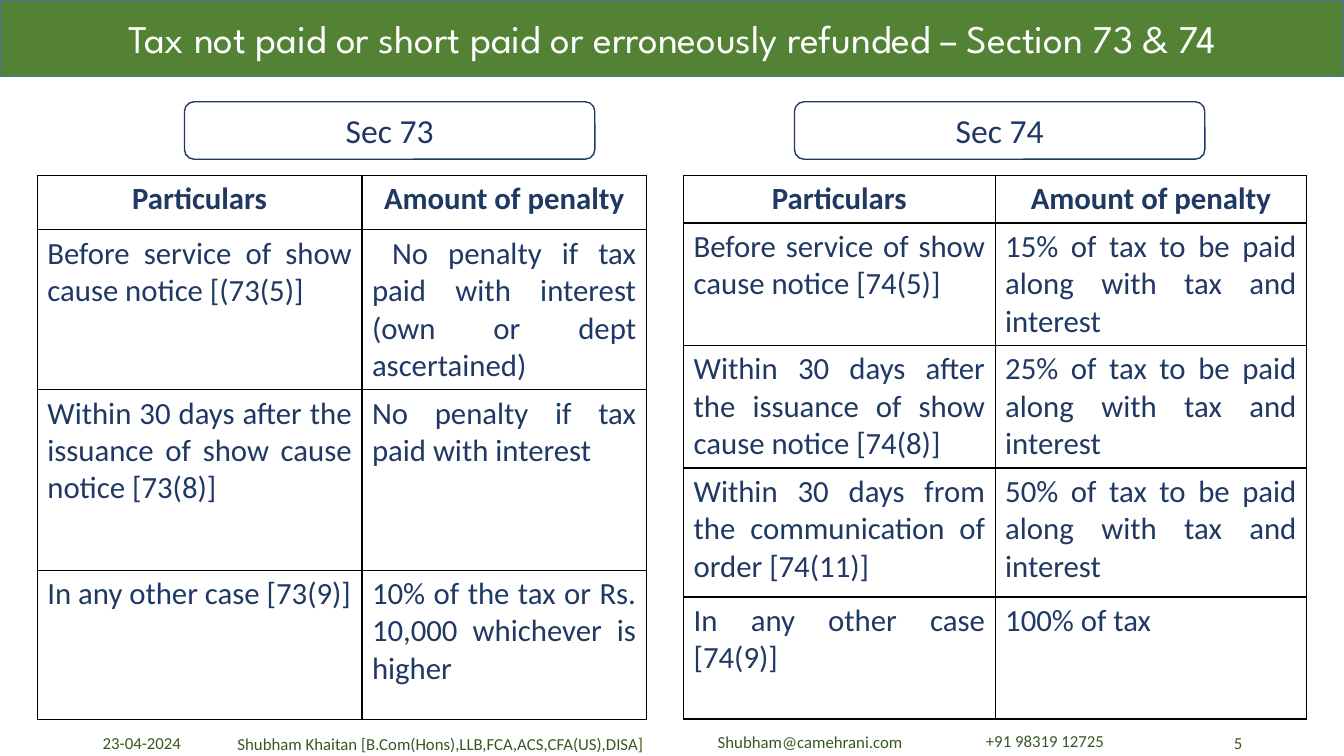
from dataclasses import dataclass

from lxml import etree
from pptx import Presentation
from pptx.dml.color import RGBColor
from pptx.enum.shapes import MSO_SHAPE
from pptx.enum.text import MSO_ANCHOR, PP_ALIGN
from pptx.oxml.ns import qn
from pptx.util import Pt

RECTANGLE = MSO_SHAPE.RECTANGLE
ROUNDED = MSO_SHAPE.ROUNDED_RECTANGLE
MIDDLE = MSO_ANCHOR.MIDDLE
TOP = MSO_ANCHOR.TOP
LEFT = PP_ALIGN.LEFT
CENTER = PP_ALIGN.CENTER
RIGHT = PP_ALIGN.RIGHT
JUSTIFY = PP_ALIGN.JUSTIFY

EMU_PER_PX = 9144
HEADER = ("Particulars", "Amount of penalty")
SECTION_73 = [
    HEADER,
    ("Before service of show cause notice [(73(5)]",
     " No penalty if tax paid with interest (own or dept ascertained)"),
    ("Within 30 days after the issuance of show cause notice [73(8)]",
     "No penalty if tax paid with interest"),
    ("In any other case [73(9)]",
     "10% of the tax or Rs. 10,000 whichever is higher"),
]
SECTION_74 = [
    HEADER,
    ("Before service of show cause notice [74(5)]",
     "15% of tax to be paid along with tax and interest"),
    ("Within 30 days after the issuance of show cause notice [74(8)]",
     "25% of tax to be paid along with tax and interest"),
    ("Within 30 days from the communication of order [74(11)]",
     "50% of tax to be paid along with tax and interest"),
    ("In any other case [74(9)]", "100% of tax"),
]


@dataclass(frozen=True)
class Theme:
    """Colours, fonts and type sizes of the slide."""
    white: str = "FFFFFF"
    black: str = "000000"
    navy: str = "203864"
    green: str = "548235"
    dark_green: str = "385723"
    banner_line: str = "43739E"
    body_font: str = "Calibri"
    title_font: str = "League Spartan"
    title_size: int = 28
    label_size: int = 24
    table_size: int = 22
    footer_size: int = 12
    line_width: int = 1


def px(length):
    """Turn a length in px into EMU."""
    return length * EMU_PER_PX


class SlideBuilder:
    """Adds styled elements to the current slide."""

    def __init__(self, slide, theme):
        """Keep the slide and its theme."""
        self.slide = slide
        self.theme = theme

    def add_text(self, frame, text, size, color, align, font=None, bold=False):
        """Put one run into the first paragraph of a text frame."""
        frame.word_wrap = True
        paragraph = frame.paragraphs[0]
        paragraph.alignment = align
        run = paragraph.add_run()
        run.text = text
        run.font.name = font or self.theme.body_font
        run.font.size = Pt(size)
        run.font.bold = bold
        run.font.color.rgb = RGBColor.from_string(color)

    def box(self, kind, bounds, fill, line, text, size, color, font=None):
        """Add a filled, outlined shape with centred text."""
        shape = self.slide.shapes.add_shape(kind, *map(px, bounds))
        shape.shadow.inherit = False
        shape.fill.solid()
        shape.fill.fore_color.rgb = RGBColor.from_string(fill)
        shape.line.color.rgb = RGBColor.from_string(line)
        shape.line.width = Pt(self.theme.line_width)
        shape.text_frame.vertical_anchor = MIDDLE
        self.add_text(shape.text_frame, text, size, color, CENTER, font)

    def footer(self, bounds, text, align=LEFT, anchor=MIDDLE):
        """Add a small footer text."""
        shape = self.slide.shapes.add_textbox(*map(px, bounds))
        shape.text_frame.vertical_anchor = anchor
        self.add_text(shape.text_frame, text, self.theme.footer_size,
                      self.theme.dark_green, align)

    def border(self, cell):
        """Draw a solid line on every side of a cell."""
        properties = cell._tc.get_or_add_tcPr()
        for side in ("a:lnL", "a:lnR", "a:lnT", "a:lnB"):
            line = etree.SubElement(properties, qn(side),
                                    w=str(Pt(self.theme.line_width)))
            fill = etree.SubElement(line, qn("a:solidFill"))
            etree.SubElement(fill, qn("a:srgbClr"), val=self.theme.black)

    def table(self, left, top, widths, heights, rows):
        """Add a bordered table with a bold, centred header row."""
        table = self.slide.shapes.add_table(
            len(rows), len(widths), px(left), px(top),
            px(sum(widths)), px(sum(heights))).table
        table.first_row = False
        table.horz_banding = False
        for column, width in zip(table.columns, widths):
            column.width = px(width)
        for row, height, texts in zip(table.rows, heights, rows):
            row.height = px(height)
            is_header = texts is HEADER
            for cell, text in zip(row.cells, texts):
                self.border(cell)
                cell.fill.solid()
                cell.fill.fore_color.rgb = RGBColor.from_string(self.theme.white)
                self.add_text(cell.text_frame, text, self.theme.table_size,
                              self.theme.navy, CENTER if is_header else JUSTIFY,
                              bold=is_header)


def main():
    """Build the slide and save it."""
    theme = Theme()
    presentation = Presentation()
    presentation.slide_width = px(1333)
    presentation.slide_height = px(750)
    slide = presentation.slides.add_slide(presentation.slide_layouts[6])
    builder = SlideBuilder(slide, theme)

    builder.table(37, 174, (322, 282), (54, 158, 179, 148), SECTION_73)
    builder.table(678, 174, (309, 309), (47, 121, 121, 128, 121), SECTION_74)
    for left, label in ((183, "Sec 73"), (788, "Sec 74")):
        builder.box(ROUNDED, (left, 101, 407, 57), theme.white, theme.navy,
                    label, theme.label_size, theme.navy)
    builder.box(RECTANGLE, (0, 0, 1333, 76), theme.green, theme.banner_line,
                "Tax not paid or short paid or erroneously refunded – Section 73 & 74",
                theme.title_size, theme.white, theme.title_font)

    builder.footer((92, 717, 300, 40), "23-04-2024")
    builder.footer((212, 718, 450, 40),
                   "Shubham Khaitan [B.Com(Hons),LLB,FCA,ACS,CFA(US),DISA]", CENTER)
    builder.footer((942, 717, 300, 40), "5", RIGHT)
    builder.footer((702, 721, 292, 30), "Shubham@camehrani.com", anchor=TOP)
    builder.footer((968, 720, 292, 30), "+91 98319 12725", anchor=TOP)

    presentation.save("out.pptx")


if __name__ == "__main__":
    main()
